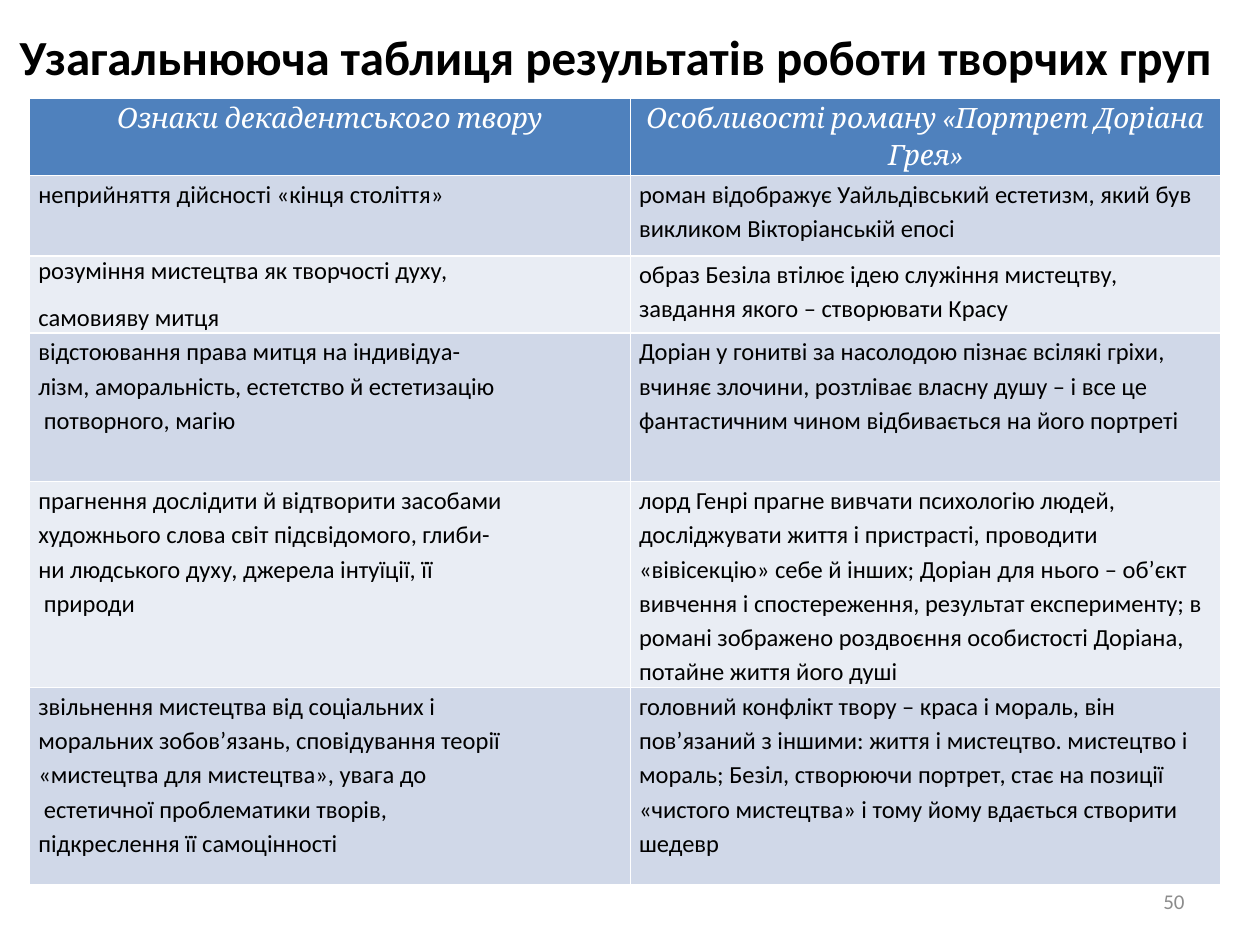
from pptx import Presentation
from pptx.dml.color import RGBColor
from pptx.enum.text import MSO_ANCHOR, PP_ALIGN
from pptx.util import Pt

TITLE = "Узагальнююча таблиця результатів роботи творчих груп"
HEADS = ("Ознаки декадентського твору", "Особливості роману «Портрет Доріана Грея»")
# Left-hand lines, right-hand text, row height, line spacing and gap after on the left
ROWS = [
    (["неприйняття дійсності «кінця століття»"],
     "роман відображує Уайльдівський естетизм, який був викликом Вікторіанській епосі",
     46, 1.15, 10),
    (["розуміння мистецтва як творчості духу,", "самовияву митця"],
     "образ Безіла втілює ідею служіння мистецтву, завдання якого – створювати Красу",
     44, 1.0, 10),
    (["відстоювання права митця на індивідуа-",
      "лізм, аморальність, естетство й естетизацію",
      " потворного, магію"],
     "Доріан у гонитві за насолодою пізнає всілякі гріхи, вчиняє злочини, розтліває "
     "власну душу – і все це фантастичним чином відбивається на його портреті",
     85, 1.15, 0),
    (["прагнення дослідити й відтворити засобами",
      "художнього слова світ підсвідомого, глиби-",
      "ни людського духу, джерела інтуїції, її",
      " природи"],
     "лорд Генрі прагне вивчати психологію людей, досліджувати життя і пристрасті, "
     "проводити «вівісекцію» себе й інших; Доріан для нього – об’єкт вивчення і "
     "спостереження, результат експерименту; в романі зображено роздвоєння "
     "особистості Доріана, потайне життя його душі",
     105, 1.15, 0),
    (["звільнення мистецтва від соціальних і",
      "моральних зобов’язань, сповідування теорії",
      "«мистецтва для мистецтва», увага до",
      " естетичної проблематики творів,",
      "підкреслення її самоцінності"],
     "головний конфлікт твору – краса і мораль, він пов’язаний з іншими: життя і "
     "мистецтво. мистецтво і мораль; Безіл, створюючи портрет, стає на позиції "
     "«чистого мистецтва» і тому йому вдається створити шедевр",
     112.5, 1.15, 0),
]
PAGE = "50"

THEME = {
    "body": "Calibri", "head": "Cambria",
    "title_size": 28, "head_size": 16, "body_size": 14, "page_size": 12,
    "ink": "000000", "light": "FFFFFF", "grey": "8C8C8C",
    "head_fill": "4F81BD", "bands": ("D0D8E8", "E9EDF4"),
}
HEAD_HIGH = 44
WIDTHS = (343.3, 337.4)
HANG = Pt(27)


def style(para, size, color, face="body", bold=False, italic=False, align=PP_ALIGN.LEFT):
    font = para.font
    font.name, font.size = THEME[face], Pt(THEME[size])
    font.bold, font.italic = bold, italic
    font.color.rgb = RGBColor.from_string(THEME[color])
    para.alignment = align


def fill_cell(cell, lines, fill, look, space=1.15, after=10, hang=False):
    cell.fill.solid()
    cell.fill.fore_color.rgb = RGBColor.from_string(fill)
    cell.margin_left = cell.margin_right = Pt(5)
    cell.margin_top = cell.margin_bottom = 0
    frame = cell.text_frame
    for i, line in enumerate(lines):
        para = frame.add_paragraph() if i else frame.paragraphs[0]
        para.text = line
        style(para, **look)
        para.line_spacing, para.space_after = space, Pt(after)
        if hang:
            props = para._p.get_or_add_pPr()
            props.set("marL", str(HANG))
            props.set("indent", str(-HANG))


def add_grid(slide):
    high = HEAD_HIGH + sum(row[2] for row in ROWS)
    grid = slide.shapes.add_table(len(ROWS) + 1, 2, Pt(16.9), Pt(56.2),
                                  Pt(sum(WIDTHS)), Pt(high)).table
    for col, width in zip(grid.columns, WIDTHS):
        col.width = Pt(width)
    grid.rows[0].height = Pt(HEAD_HIGH)
    look = dict(size="head_size", color="light", face="head",
                italic=True, align=PP_ALIGN.CENTER)
    for c, text in enumerate(HEADS):
        fill_cell(grid.cell(0, c), [text], THEME["head_fill"], look)
    look = dict(size="body_size", color="ink")
    for r, (left, right, tall, space, after) in enumerate(ROWS, 1):
        grid.rows[r].height = Pt(tall)
        band = THEME["bands"][(r - 1) % 2]
        fill_cell(grid.cell(r, 0), left, band, look, space, after, hang=True)
        fill_cell(grid.cell(r, 1), [right], band, look)


def place_text(shape, text, box, **look):
    shape.left, shape.top, shape.width, shape.height = map(Pt, box)
    frame = shape.text_frame
    frame.word_wrap = True
    frame.vertical_anchor = MSO_ANCHOR.MIDDLE
    frame.text = text
    style(frame.paragraphs[0], **look)


def main():
    deck = Presentation()
    deck.slide_width, deck.slide_height = Pt(720), Pt(540)
    slide = deck.slides.add_slide(deck.slide_layouts[5])
    place_text(slide.shapes.title, TITLE, (0, 11.5, 703.4, 40.3),
               size="title_size", color="ink", bold=True, align=PP_ALIGN.CENTER)
    add_grid(slide)
    place_text(slide.shapes.add_textbox(0, 0, 0, 0), PAGE, (516, 500.5, 168, 28.8),
               size="page_size", color="grey", align=PP_ALIGN.RIGHT)
    deck.save("out.pptx")


if __name__ == "__main__":
    main()
